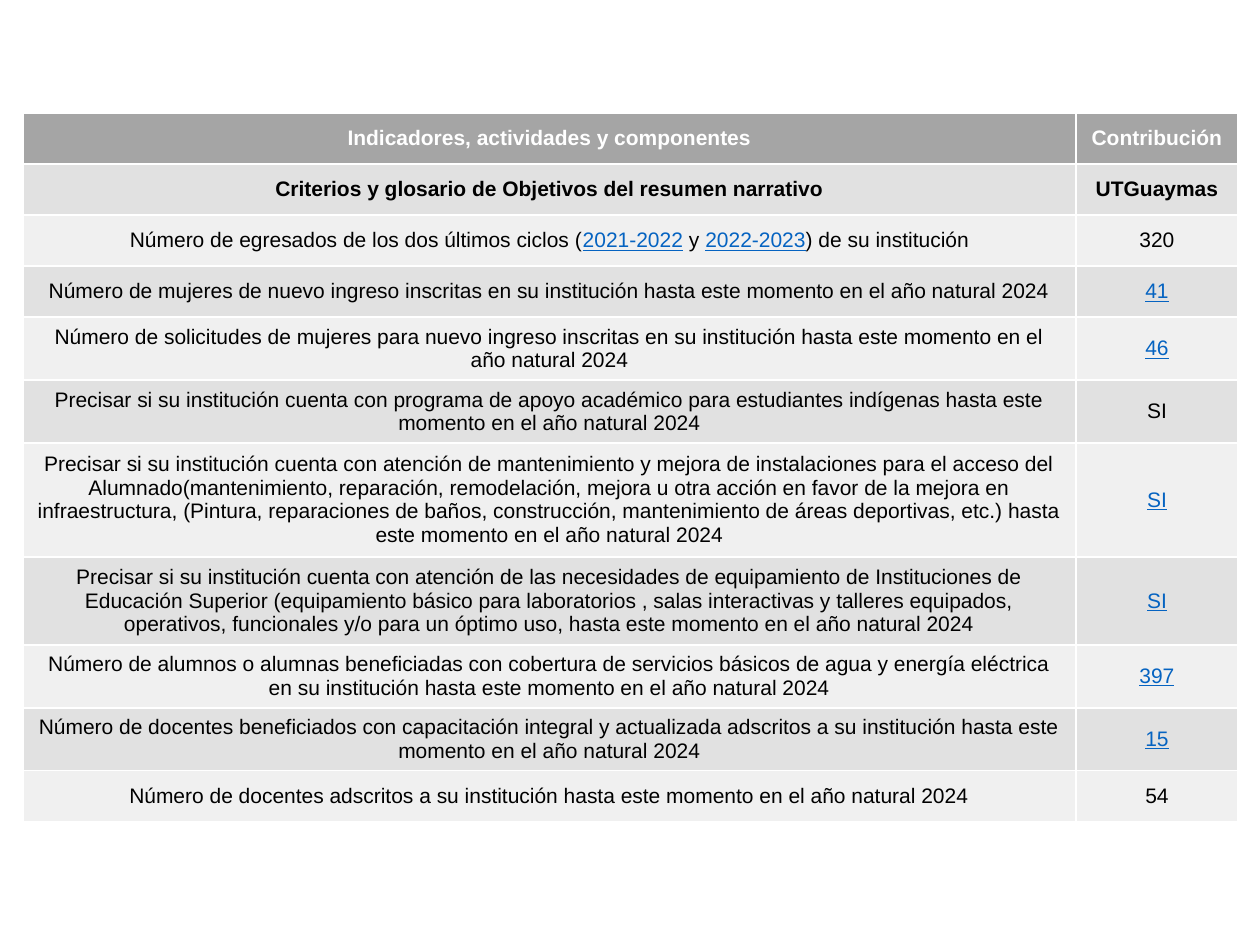
import pptx
import pptx.dml.color
import pptx.enum.text
import pptx.util

EMU_PER_PX = 914400 // 126
LINK_MARK = "*"  # encloses the words shown as links

COLUMN_WIDTHS = [1053, 162]
# Each row: height, indicator, contribution
ROWS = [
    (51, "Indicadores, actividades y componentes", "Contribución"),
    (51, "Criterios y glosario de Objetivos del resumen narrativo", "UTGuaymas"),
    (51, "Número de egresados de los dos últimos ciclos (*2021-2022* y *2022-2023*) "
         "de su institución", "320"),
    (51, "Número de mujeres de nuevo ingreso inscritas en su institución hasta este "
         "momento en el año natural 2024", "*41*"),
    (63, "Número de solicitudes de mujeres para nuevo ingreso inscritas en su institución "
         "hasta este momento en el año natural 2024", "*46*"),
    (63, "Precisar si su institución cuenta con programa de apoyo académico para estudiantes "
         "indígenas hasta este momento en el año natural 2024", "SI"),
    (114, "Precisar si su institución cuenta con atención de mantenimiento y mejora de "
          "instalaciones para el acceso del Alumnado(mantenimiento, reparación, remodelación, "
          "mejora u otra acción en favor de la mejora en infraestructura, (Pintura, "
          "reparaciones de baños, construcción, mantenimiento de áreas deportivas, etc.) hasta "
          "este momento en el año natural 2024", "*SI*"),
    (88, "Precisar si su institución cuenta con atención de las necesidades de equipamiento de "
         "Instituciones de Educación Superior (equipamiento básico para laboratorios , salas "
         "interactivas y talleres equipados, operativos, funcionales y/o para un óptimo uso, "
         "hasta este momento en el año natural 2024", "*SI*"),
    (63, "Número de alumnos o alumnas beneficiadas con cobertura de servicios básicos de agua "
         "y energía eléctrica en su institución hasta este momento en el año natural 2024",
     "*397*"),
    (63, "Número de docentes beneficiados con capacitación integral y actualizada adscritos a "
         "su institución hasta este momento en el año natural 2024", "*15*"),
    (51, "Número de docentes adscritos a su institución hasta este momento en el año "
         "natural 2024", "54"),
]


def px(length):
    """Turn pixels into EMU."""
    return pptx.util.Emu(length * EMU_PER_PX)


def color(hex_string):
    return pptx.dml.color.RGBColor.from_string(hex_string)


class SlideBuilder:
    """Holds the style and the current slide."""

    font_name = "Arial"
    font_size = 12
    header_fill, header_text = "A5A5A5", "FFFFFF"
    band_fills = ["F0F0F0", "E1E1E1"]
    body_text, link_text = "000000", "0563C1"
    bold_rows = 2

    def __init__(self, presentation):
        self.slide = presentation.slides.add_slide(presentation.slide_layouts[6])

    def add_table(self, left, top, column_widths, rows):
        """Add the table; the white borders come from its default style."""
        height = sum(row[0] for row in rows)
        table = self.slide.shapes.add_table(
            len(rows), len(column_widths),
            px(left), px(top), px(sum(column_widths)), px(height)).table
        for column, width in zip(table.columns, column_widths):
            column.width = px(width)
        for row_index, (row_height, *texts) in enumerate(rows):
            table.rows[row_index].height = px(row_height)
            for column_index, text in enumerate(texts):
                self.fill_cell(table.cell(row_index, column_index), row_index, text)

    def fill_cell(self, cell, row_index, text):
        is_header = row_index == 0
        cell.fill.solid()
        cell.fill.fore_color.rgb = color(
            self.header_fill if is_header else self.band_fills[row_index % 2])
        cell.vertical_anchor = pptx.enum.text.MSO_ANCHOR.MIDDLE
        paragraph = cell.text_frame.paragraphs[0]
        paragraph.alignment = pptx.enum.text.PP_ALIGN.CENTER
        plain_color = self.header_text if is_header else self.body_text
        for piece_index, piece in enumerate(text.split(LINK_MARK)):
            if not piece:
                continue
            is_link = piece_index % 2 == 1
            run = paragraph.add_run()
            run.text = piece
            run.font.name = self.font_name
            run.font.size = pptx.util.Pt(self.font_size)
            run.font.bold = row_index < self.bold_rows
            run.font.underline = is_link
            run.font.color.rgb = color(self.link_text if is_link else plain_color)


def main():
    presentation = pptx.Presentation()
    presentation.slide_width = pptx.util.Inches(10)
    presentation.slide_height = pptx.util.Inches(7.5)
    builder = SlideBuilder(presentation)
    builder.add_table(23, 113, COLUMN_WIDTHS, ROWS)
    presentation.save("out.pptx")


if __name__ == "__main__":
    main()
